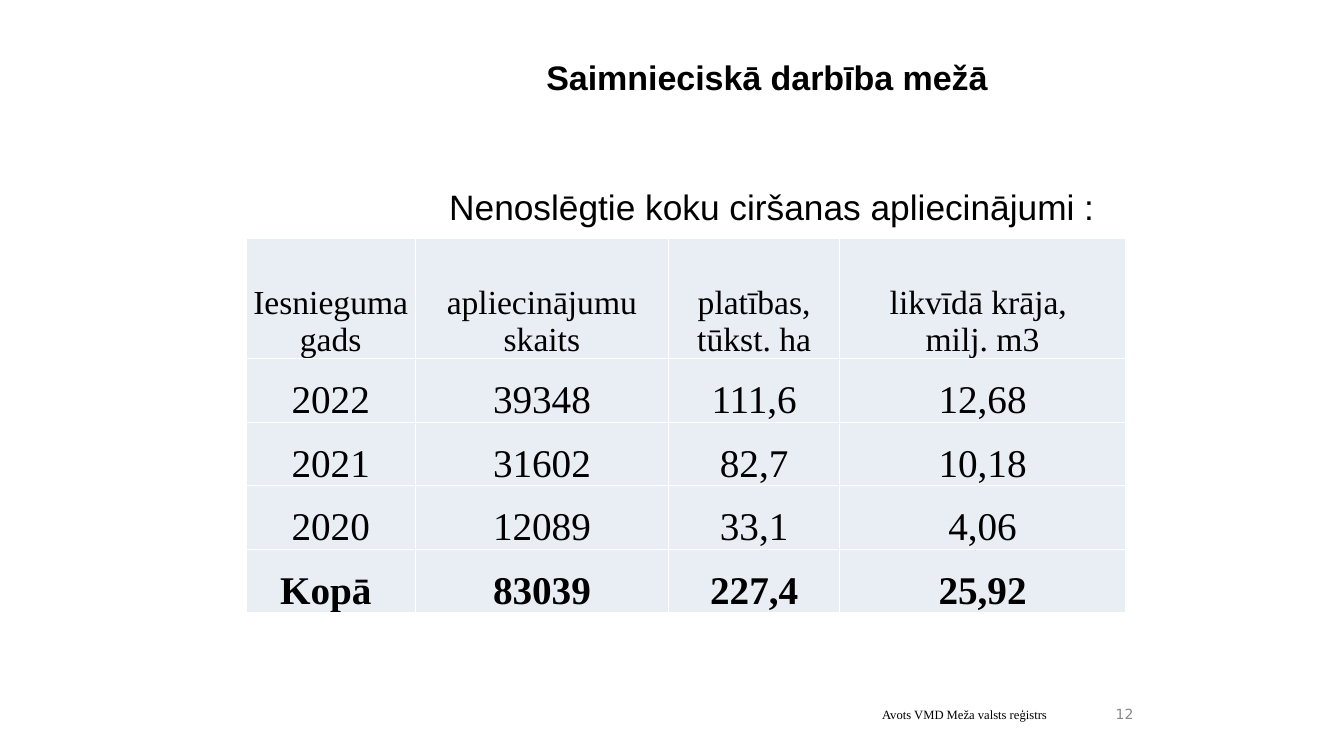
from pptx import Presentation
from pptx import util as u
from pptx.dml import color
from pptx.enum import text
from pptx.oxml import parse_xml
from pptx.oxml.ns import nsdecls

COLORS = {"ink": "000000", "cell": "E9EDF4", "border": "FFFFFF", "number": "898989"}
SERIF = "Times New Roman"
CENTER = text.PP_ALIGN.CENTER


class SlideBuilder:
    """Holds the style and the current slide, and adds its elements."""

    def __init__(self, deck):
        self.page = deck.slides.add_slide(deck.slide_layouts[6])

    def add_para(self, frame, words, size, font, align, bold=False, ink="ink", first=True, gap=0):
        para = frame.paragraphs[0] if first else frame.add_paragraph()
        para.alignment = align
        if gap:
            para.space_before = u.Pt(gap)
        span = para.add_run()
        span.text = words
        span.font.size = u.Pt(size)
        span.font.name = font
        span.font.bold = bold
        span.font.color.rgb = color.RGBColor.from_string(COLORS[ink])

    def add_box(self, left, top, width, height, anchor=text.MSO_ANCHOR.TOP):
        box = self.page.shapes.add_textbox(*map(u.Inches, (left, top, width, height)))
        frame = box.text_frame
        frame.word_wrap = True
        frame.vertical_anchor = anchor
        return frame

    def style_cell(self, cell):
        cell.margin_left = cell.margin_right = cell.margin_top = u.Inches(0.01)
        cell.margin_bottom = 0
        cell.vertical_anchor = text.MSO_ANCHOR.BOTTOM
        properties = cell._tc.get_or_add_tcPr()
        for side in ("lnL", "lnR", "lnT", "lnB"):
            properties.append(parse_xml(
                f'<a:{side} {nsdecls("a")} w="{u.Pt(1)}"><a:solidFill>'
                f'<a:srgbClr val="{COLORS["border"]}"/></a:solidFill></a:{side}>'))
        cell.fill.solid()
        cell.fill.fore_color.rgb = color.RGBColor.from_string(COLORS["cell"])

    def add_table(self, left, top, widths, heights, rows):
        area = map(u.Inches, (left, top, sum(widths), sum(heights)))
        table = self.page.shapes.add_table(len(rows), len(widths), *area).table
        for column, width in zip(table.columns, widths):
            column.width = u.Inches(width)
        for row, height in zip(table.rows, heights):
            row.height = u.Inches(height)
        for r, row in enumerate(rows):
            for c, words in enumerate(row):
                cell = table.cell(r, c)
                self.style_cell(cell)
                for i, line in enumerate(words.split("\n")):
                    self.add_para(cell.text_frame, line, 28 if r else 24, SERIF, CENTER,
                                  bold=r == len(rows) - 1, first=i == 0)


def main():
    deck = Presentation()
    deck.slide_width, deck.slide_height = u.Inches(13.33), u.Inches(7.5)
    slide = SlideBuilder(deck)

    title = slide.add_box(4.32, 0.51, 6.67, 1.13)
    slide.add_para(title, "Saimnieciskā darbība mežā ", 24.3, "Arial", CENTER, bold=True)
    slide.add_para(title, "Nenoslēgtie koku ciršanas apliecinājumi :", 25.2, "Arial", CENTER,
                   first=False, gap=63)

    number = slide.add_box(10.83, 6.92, 0.51, 0.33, text.MSO_ANCHOR.MIDDLE)
    slide.add_para(number, "12", 10, "DejaVu Sans", text.PP_ALIGN.RIGHT, ink="number")

    slide.add_table(2.44, 2.37, [1.68, 2.51, 1.7, 2.83], [1.19] + [0.63] * 4, [
        ["Iesnieguma gads", "apliecinājumu skaits", "platības, tūkst. ha",
         "likvīdā krāja, \nmilj. m3"],
        ["2022", "39348", "111,6", "12,68"],
        ["2021", "31602", "82,7", "10,18"],
        ["2020", "12089", "33,1", "4,06"],
        ["Kopā ", "83039", "227,4", "25,92"],
    ])

    source = slide.add_box(8.65, 6.96, 2.01, 0.25)
    slide.add_para(source, "Avots VMD Meža valsts reģistrs", 9, SERIF, text.PP_ALIGN.LEFT)

    deck.save("out.pptx")


if __name__ == "__main__":
    main()
